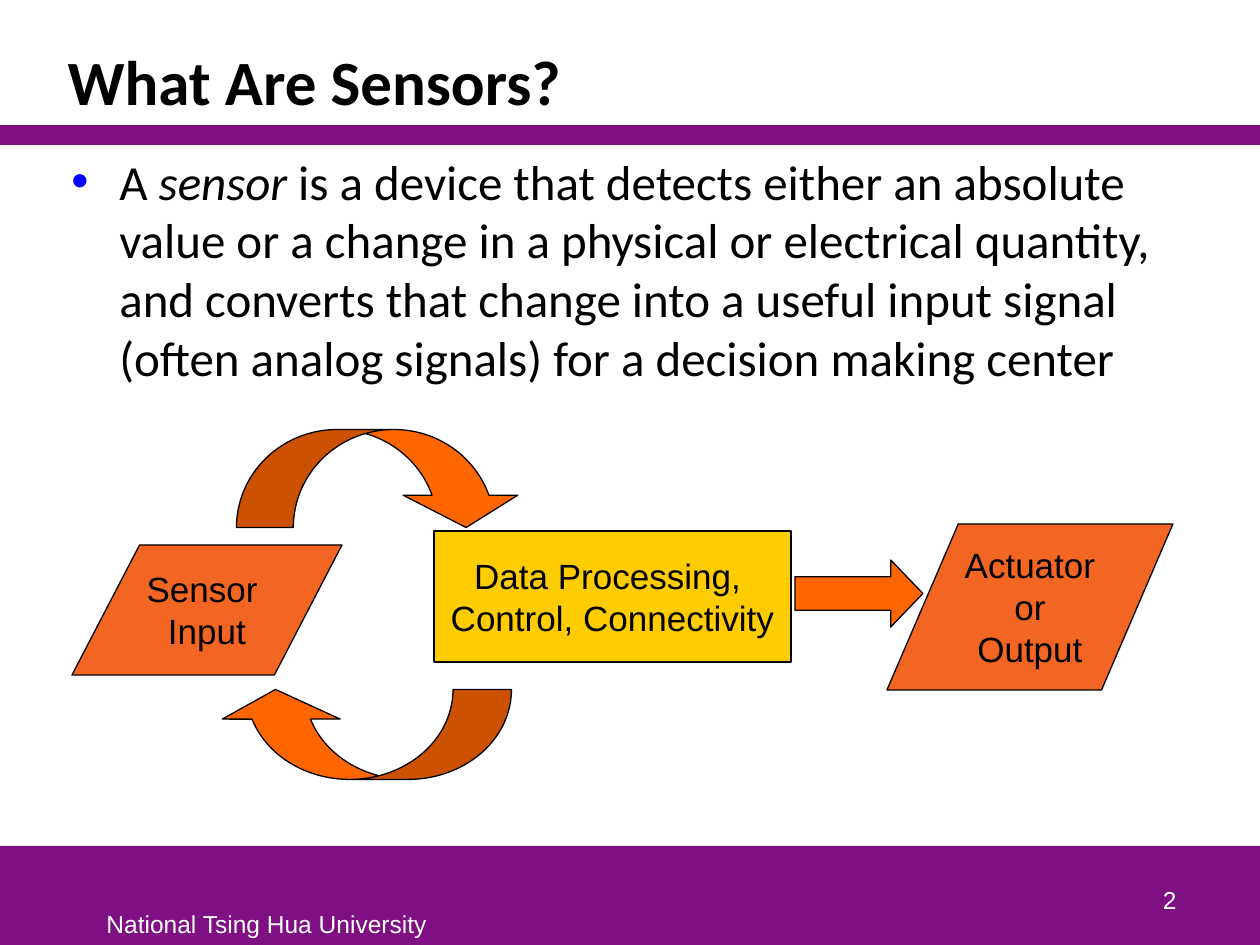
from pptx import Presentation, util as u
from pptx.dml.color import RGBColor
from pptx.enum import shapes, text
from lxml import etree

PX = 914400 // 126
HUE = {"purple": "7F1084", "gold": "FFCC00", "coral": "F26522",
       "orange": "FF6600", "black": "000000", "white": "FFFFFF", "blue": "0000FF"}
KIND, ALIGN, MID = shapes.MSO_SHAPE, text.PP_ALIGN, text.MSO_ANCHOR.MIDDLE
LOW = text.MSO_ANCHOR.BOTTOM

# Content: boxes are left, top, width, height in px
TITLE = "What Are Sensors?"
BODY = [("A ", False), ("sensor", True),
        (" is a device that detects either an absolute value or a change in a "
         "physical or electrical quantity, and converts that change into a useful "
         "input signal (often analog signals) for a decision making center", False)]
BARS = [(0, 846, 1260, 99), (0, 125, 1260, 20)]
NODES = [
    (KIND.RECTANGLE, (434, 531, 357, 131), "gold", [],
     ["Data Processing, ", "Control, Connectivity"]),
    (KIND.PARALLELOGRAM, (72, 545, 270, 130), "coral", [0.52], ["Sensor ", "Input"]),
    (KIND.PARALLELOGRAM, (887, 524, 286, 166), "coral", [0.43],
     ["Actuator", "or", "Output"]),
]
ARROWS = [
    (KIND.CURVED_LEFT_ARROW, (319, 587, 90, 295), [0.65, 1.31, 0.33], 90),
    (KIND.CURVED_LEFT_ARROW, (331, 335, 98, 287), [0.58, 1.17, 0.33], 270),
    (KIND.RIGHT_ARROW, (795, 560, 128, 67), [0.5, 0.48], 0),
]
SMALL = {"name": "Arial", "size": u.Pt(14)}
LABEL = {"name": "Arial", "size": u.Pt(20)}
PROSE = {"name": "Calibri", "size": u.Pt(28)}
HEAD = {"name": "Calibri", "size": u.Pt(36), "bold": True}


def emu(box):
    return [n * PX for n in box]


def style(font, form, hue="black"):
    for key, val in form.items():
        setattr(font, key, val)
    font.color.rgb = RGBColor.from_string(HUE[hue])


def draw(kind, box, hue, adj=(), edge=True):
    shape = slide.shapes.add_shape(kind, *emu(box))
    shape.shadow.inherit = False
    shape.fill.solid()
    shape.fill.fore_color.rgb = RGBColor.from_string(HUE[hue])
    if edge:
        shape.line.color.rgb = RGBColor.from_string(HUE["black"])
        shape.line.width = u.Pt(0.75)
    else:
        shape.line.fill.background()
    for i, val in enumerate(adj):
        shape.adjustments[i] = val
    return shape


def note(box, words, wrap, align):
    frame = slide.shapes.add_textbox(*emu(box)).text_frame
    frame.word_wrap = wrap
    par = frame.paragraphs[0]
    par.text, par.alignment = words, align
    style(par.font, SMALL, "white")
    return frame


deck = Presentation()
deck.slide_width, deck.slide_height = emu((1260, 945))
slide = deck.slides.add_slide(deck.slide_layouts[5])

# Bands and footer
for box in BARS:
    draw(KIND.RECTANGLE, box, "purple", edge=False)
note((94, 903, 348, 42), "National Tsing Hua University", False, ALIGN.LEFT)
note((927, 858, 262, 63), "2", True, ALIGN.RIGHT).vertical_anchor = LOW

# Title
title = slide.shapes.title
title.left, title.top, title.width, title.height = emu((55, 32, 1130, 93))
frame = title.text_frame
frame.text = TITLE
frame.auto_size, frame.vertical_anchor = text.MSO_AUTO_SIZE.NONE, LOW
par = frame.paragraphs[0]
par.alignment, par.line_spacing = ALIGN.LEFT, 0.85
style(par.font, HEAD)

# Bulleted definition
frame = slide.shapes.add_textbox(*emu((59, 145, 1126, 684))).text_frame
frame.word_wrap = True
par = frame.paragraphs[0]
prop = par._p.get_or_add_pPr()
prop.set("marL", str(48 * PX))
prop.set("indent", str(-48 * PX))
NS = "{http://schemas.openxmlformats.org/drawingml/2006/main}"
tint = etree.SubElement(prop, NS + "buClr")
etree.SubElement(tint, NS + "srgbClr", val=HUE["blue"])
etree.SubElement(prop, NS + "buFont", typeface="Arial")
etree.SubElement(prop, NS + "buChar", char="•")
for words, slant in BODY:
    run = par.add_run()
    run.text = words
    style(run.font, {**PROSE, "italic": slant})

# Diagram nodes
for kind, box, hue, adj, lines in NODES:
    frame = draw(kind, box, hue, adj).text_frame
    frame.word_wrap, frame.vertical_anchor = False, MID
    frame.text = "\n".join(lines)
    for par in frame.paragraphs:
        par.alignment = ALIGN.CENTER
        style(par.font, LABEL)

# Flow arrows
for kind, box, adj, turn in ARROWS:
    draw(kind, box, "orange", adj).rotation = turn

deck.save("out.pptx")
